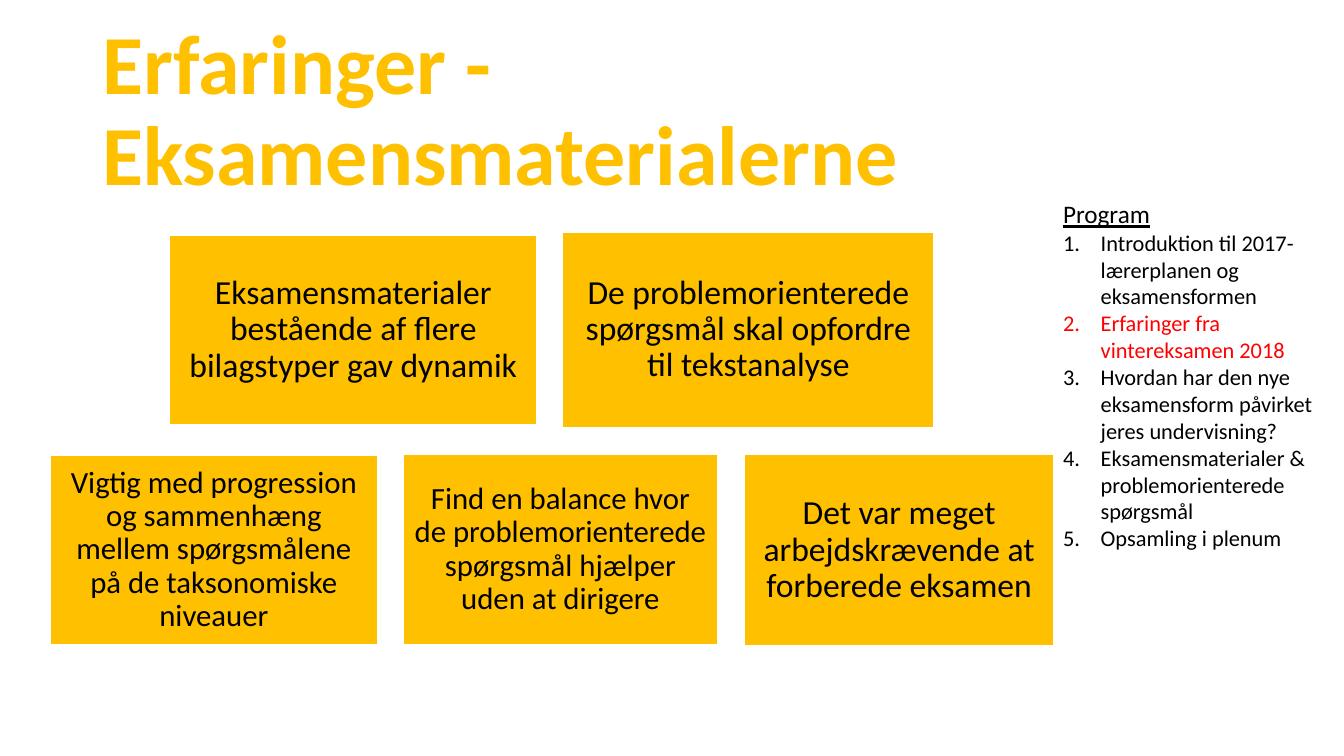
from lxml.etree import SubElement as Sub
from pptx import Presentation as Deck
from pptx.dml.color import RGBColor as Rgb
from pptx.enum.shapes import MSO_SHAPE as Kind
from pptx.enum.text import MSO_ANCHOR as Anchor, PP_ALIGN as Align
from pptx.oxml.ns import qn
from pptx.util import Cm, Pt

GOLD, BLACK, RED, WHITE = "FFC000", "000000", "FF0000", "FFFFFF"

# left, top, width, height in cm, then size, inset and text
CARDS = [
    ((4.28, 5.93, 9.25, 4.77), 24, 0.25,
     "Eksamensmaterialer bestående af flere bilagstyper gav dynamik"),
    ((14.18, 5.85, 9.36, 4.92), 24, 0.25,
     "De problemorienterede spørgsmål skal opfordre til tekstanalyse"),
    ((1.26, 11.47, 8.26, 4.77), 22, 0.24,
     "Vigtig med progression og sammenhæng mellem spørgsmålene "
     "på de taksonomiske niveauer"),
    ((10.16, 11.45, 7.93, 4.8), 22, 0.24,
     "Find en balance hvor de problemorienterede spørgsmål hjælper "
     "uden at dirigere"),
    ((18.76, 11.45, 7.8, 4.83), 24, 0.25,
     "Det var meget arbejdskrævende at forberede eksamen"),
]
STEPS = [
    "Introduktion til 2017-lærerplanen og eksamensformen",
    "Erfaringer fra vintereksamen 2018",
    "Hvordan har den nye eksamensform påvirket jeres undervisning?",
    "Eksamensmaterialer & problemorienterede spørgsmål",
    "Opsamling i plenum",
]
ACTIVE = 1


def color(code):
    return Rgb.from_string(code)


def apply(item, form):
    for name, value in form.items():
        setattr(item, name, value)


def write(para, text, size, code, **form):
    run = para.add_run()
    run.text = text
    apply(run.font, {"name": "Calibri", "size": Pt(size), **form})
    run.font.color.rgb = color(code)


def frame(slide, box):
    text = slide.shapes.add_textbox(*map(Cm, box)).text_frame
    text.word_wrap = True
    return text


def title(slide, box):
    text = frame(slide, box)
    text.vertical_anchor = Anchor.MIDDLE
    para = text.paragraphs[0]
    para.line_spacing = 0.9
    write(para, "Erfaringer - Eksamensmaterialerne", 60, GOLD, bold=True)


def card(slide, box, size, inset, words):
    shape = slide.shapes.add_shape(Kind.RECTANGLE, *map(Cm, box))
    shape.shadow.inherit = False
    shape.fill.solid()
    shape.fill.fore_color.rgb = color(GOLD)
    shape.line.color.rgb = color(WHITE)
    shape.line.width = Pt(1)
    text = shape.text_frame
    sides = ("left", "top", "right", "bottom")
    apply(text, {f"margin_{side}": Cm(inset) for side in sides})
    apply(text, {"word_wrap": True, "vertical_anchor": Anchor.MIDDLE})
    para = text.paragraphs[0]
    apply(para, {"alignment": Align.CENTER, "line_spacing": 0.9})
    write(para, words, size, BLACK)


def agenda(slide, box):
    text = frame(slide, box)
    write(text.paragraphs[0], "Program", 18, BLACK, underline=True)
    for i, step in enumerate(STEPS):
        para = text.add_paragraph()
        # Hanging indent with automatic numbers
        props = para._p.get_or_add_pPr()
        props.set("marL", str(Cm(0.95)))
        props.set("indent", str(-Cm(0.95)))
        Sub(props, qn("a:buFont"), typeface="+mj-lt")
        Sub(props, qn("a:buAutoNum"), type="arabicPeriod")
        write(para, step, 16, RED if i == ACTIVE else BLACK)


def main():
    deck = Deck()
    apply(deck, {"slide_width": Cm(33.87), "slide_height": Cm(19.05)})
    slide = deck.slides.add_slide(deck.slide_layouts[6])
    title(slide, (2.33, 1.01, 30.43, 3.68))
    for spec in CARDS:
        card(slide, *spec)
    agenda(slide, (26.54, 4.88, 6.86, 9.25))
    deck.save("out.pptx")


if __name__ == "__main__":
    main()
